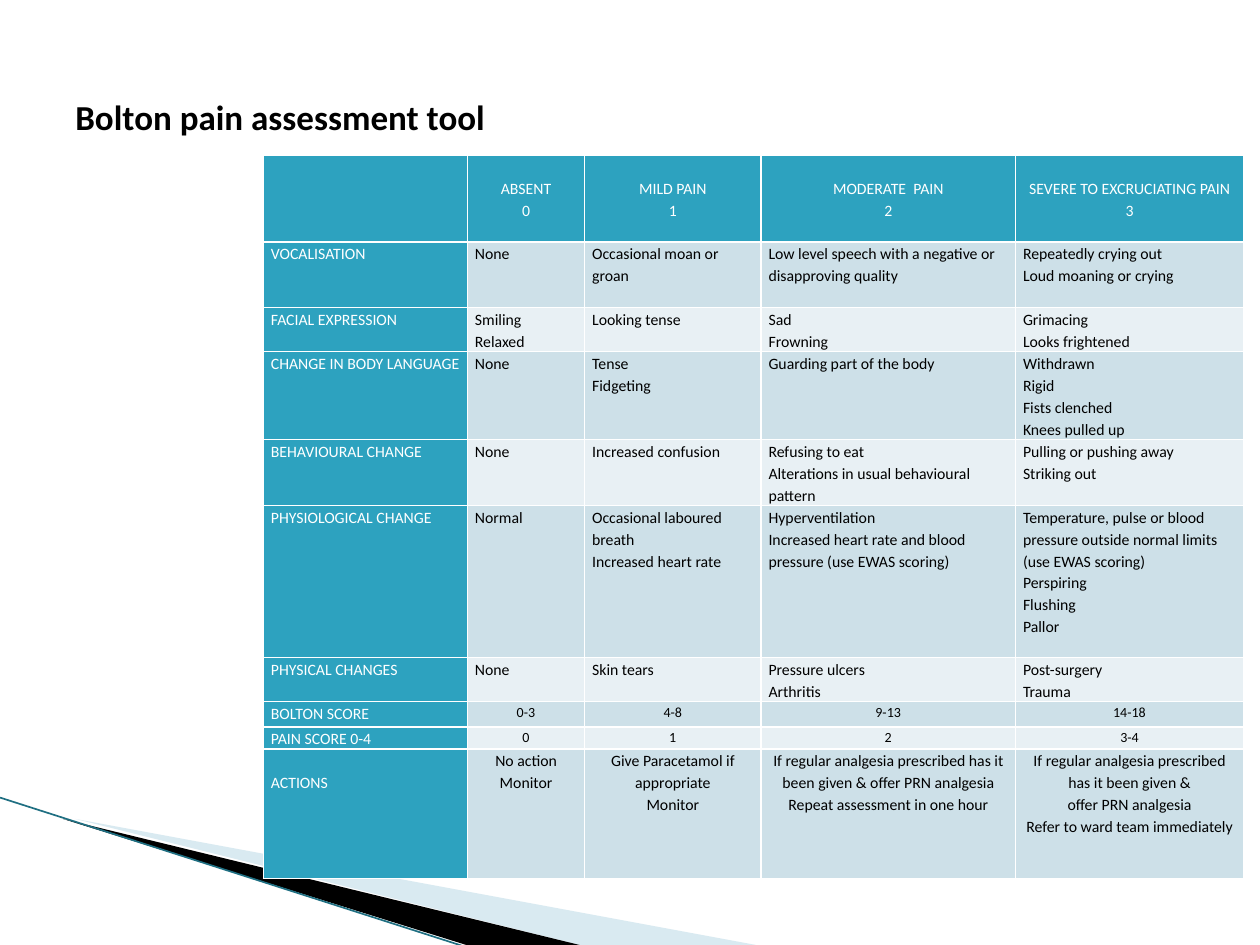
from lxml import etree
from pptx import Presentation
from pptx import util as u
from pptx.dml.color import RGBColor
from pptx.enum import shapes, text
from pptx.oxml.ns import qn

COLORS = {"head": "2DA2BF", "odd": "CDE0E8", "even": "E8F0F4", "white": "FFFFFF",
          "black": "000000", "wedge": "A0CBDC", "edge": "1F6F82"}

prs = Presentation()
prs.slide_width, prs.slide_height = u.Inches(10), u.Inches(7.5)
UNIT = prs.slide_width // 100  # the slide is a grid of 100 columns by 75 rows
slide = prs.slides.add_slide(prs.slide_layouts[6])


def grid(*cells):
    return [round(c * UNIT) for c in cells]


def write(tf, content, size=9, color="black", bold=False, align="LEFT", spacing=1.0):
    """Fill a text frame, one paragraph for each line of content."""
    tf.word_wrap = True
    for i, line in enumerate(content.split("\n")):
        p = tf.paragraphs[0] if i == 0 else tf.add_paragraph()
        p.alignment = getattr(text.PP_ALIGN, align)
        p.line_spacing = spacing
        r = p.add_run()
        r.text = line
        r.font.name, r.font.size, r.font.bold = "Calibri", u.Pt(size), bold
        r.font.color.rgb = RGBColor.from_string(COLORS[color])


# Corner decoration
wedges = [("wedge", 40, [(5.5, 65.1), (59.5, 75.1), (45.6, 75.1), (5.5, 65)]),
          ("black", 100, [(5.3, 64.9), (45.7, 75.1), (37.2, 75.2), (5.4, 65)])]
for color, opacity, points in wedges:
    builder = slide.shapes.build_freeform(*points[0], scale=UNIT)
    builder.add_line_segments(points[1:], close=True)
    sp = builder.convert_to_shape()
    sp.shadow.inherit = False
    sp.line.fill.background()
    sp.fill.solid()
    sp.fill.fore_color.rgb = RGBColor.from_string(COLORS[color])
    if opacity < 100:
        rgb = sp._element.spPr.find(qn("a:solidFill"))[0]
        etree.SubElement(rgb, qn("a:alpha")).set("val", str(opacity * 1000))

edge = slide.shapes.add_connector(shapes.MSO_CONNECTOR.STRAIGHT, *grid(0, 63.3, 37.1, 75.2))
edge.line.color.rgb = RGBColor.from_string(COLORS["edge"])
edge.line.width = u.Pt(0.95)
etree.SubElement(edge._element.spPr, qn("a:effectLst"))

# Assessment table
col_widths = [16.2, 9.3, 14, 20.2, 18.1]
rows = [  # height, then the text of each column
    (6.9, "", "ABSENT\n0", "MILD PAIN\n1", "MODERATE  PAIN\n2", "SEVERE TO EXCRUCIATING PAIN\n3"),
    (5.2, "VOCALISATION", "None", "Occasional moan or\ngroan",
     "Low level speech with a negative or disapproving quality",
     "Repeatedly crying out\nLoud moaning or crying"),
    (3.4, "FACIAL EXPRESSION", "Smiling\nRelaxed", "Looking tense", "Sad\nFrowning",
     "Grimacing\nLooks frightened"),
    (6.9, "CHANGE IN BODY LANGUAGE", "None", "Tense\nFidgeting", "Guarding part of the body",
     "Withdrawn\nRigid\nFists clenched\nKnees pulled up"),
    (5.2, "BEHAVIOURAL CHANGE", "None", "Increased confusion",
     "Refusing to eat\nAlterations in usual behavioural pattern",
     "Pulling or pushing away\nStriking out"),
    (12.1, "PHYSIOLOGICAL CHANGE", "Normal", "Occasional laboured breath\nIncreased heart rate",
     "Hyperventilation\nIncreased heart rate and blood pressure (use EWAS scoring)",
     "Temperature, pulse or blood pressure outside normal limits (use EWAS scoring)\n"
     "Perspiring\nFlushing\nPallor"),
    (3.4, "PHYSICAL CHANGES", "None", "Skin tears", "Pressure ulcers\nArthritis",
     "Post-surgery\nTrauma"),
    (2, "BOLTON SCORE", "0-3", "4-8", "9-13", "14-18"),
    (1.7, "PAIN SCORE 0-4", "0", "1", "2", "3-4"),
    (10.3, "ACTIONS", "No action Monitor", "Give Paracetamol if appropriate\nMonitor",
     "If regular analgesia prescribed has it been given & offer PRN analgesia\n"
     "Repeat assessment in one hour",
     "If regular analgesia prescribed has it been given &\noffer PRN analgesia\n"
     "Refer to ward team immediately"),
]
ACTIONS = len(rows) - 1
SCORES = (ACTIONS - 2, ACTIONS - 1)
CENTERED = (0, *SCORES, ACTIONS)

table = slide.shapes.add_table(len(rows), len(col_widths), *grid(
    20.9, 12.3, sum(col_widths), sum(row[0] for row in rows))).table
for column, width in zip(table.columns, grid(*col_widths)):
    column.width = width
for i, (height, *contents) in enumerate(rows):
    table.rows[i].height = grid(height)[0]
    for j, content in enumerate(contents):
        cell = table.cell(i, j)
        heading = i == 0 or j == 0
        lowered = i == 0 or (i == ACTIONS and j == 0)
        cell.margin_left = cell.margin_right = grid(0.6)[0]
        cell.margin_top, cell.margin_bottom = grid(1.75 if lowered else 0, 0)
        cell.fill.solid()
        fill = "head" if heading else "odd" if i % 2 else "even"
        cell.fill.fore_color.rgb = RGBColor.from_string(COLORS[fill])
        if content:
            write(cell.text_frame, content, spacing=1.15,
                  size=8 if i in SCORES and not heading else 9,
                  color="white" if heading else "black",
                  align="CENTER" if i in CENTERED and j > 0 else "LEFT")

# Title
title = slide.shapes.add_textbox(*grid(5, 3, 90, 12.5))
title.text_frame.vertical_anchor = text.MSO_ANCHOR.MIDDLE
write(title.text_frame, "Bolton pain assessment tool", size=20, bold=True)

prs.save("out.pptx")
